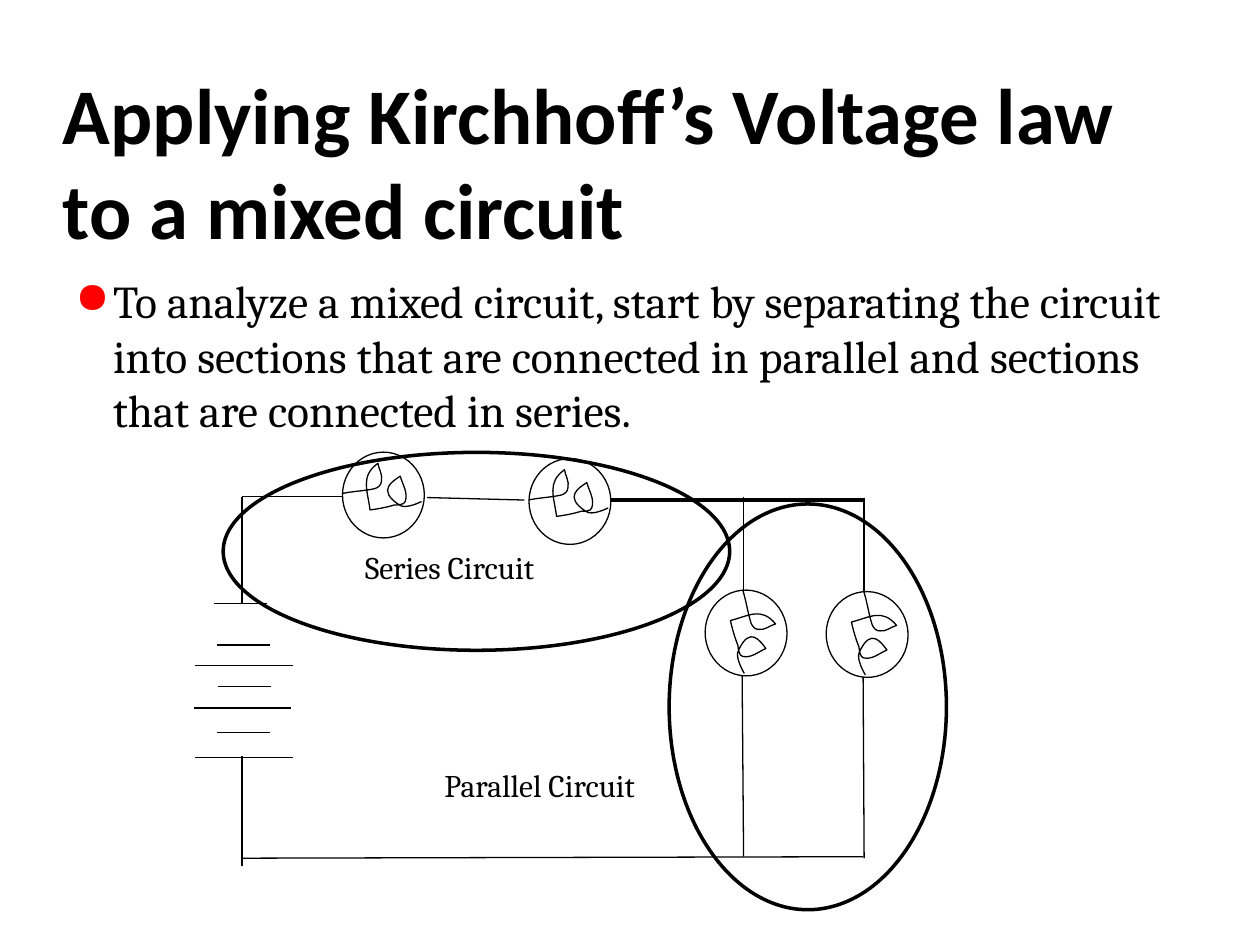
from dataclasses import dataclass
from math import cos, radians, sin
from typing import NamedTuple

from lxml.etree import SubElement
from pptx import Presentation
from pptx.dml.color import RGBColor
from pptx.enum.shapes import MSO_CONNECTOR, MSO_SHAPE
from pptx.enum.text import MSO_ANCHOR, MSO_AUTO_SIZE
from pptx.oxml.ns import qn
from pptx.shapes.autoshape import Shape
from pptx.shapes.shapetree import GroupShapes, SlideShapes
from pptx.text.text import _Paragraph as Paragraph
from pptx.util import Cm, Pt


@dataclass(frozen=True)
class Theme:
    ink: RGBColor = RGBColor(0, 0, 0)
    paper: RGBColor = RGBColor(255, 255, 255)
    bullet: str = "FF0000"
    heading_font: str = "Calibri"
    body_font: str = "Cambria"
    title_size: float = 45
    body_size: float = 26
    label_size: float = 18
    thin: float = 0.75
    outline: float = 2
    thick: float = 2.25


class Wire(NamedTuple):
    x1: float
    y1: float
    x2: float
    y2: float
    weight: float = 0.75


class Plate(NamedTuple):
    left: float
    y: float
    length: float


class Lamp(NamedTuple):
    x: float
    y: float
    turn: float = 0


class Area(NamedTuple):
    left: float
    top: float
    width: float
    height: float


class Label(NamedTuple):
    words: str
    area: Area


THEME = Theme()
SHORT, LONG = 1.07, 1.96
LAMP_WIDTH, LAMP_HEIGHT = 1.65, 1.73
TURN = 83.7

WIRES = [
    Wire(17.42, 10.03, 17.42, 11.91),
    Wire(17.4, 13.59, 17.42, 17.3),
    Wire(4.88, 10.01, 7.01, 10.01),
    Wire(12.27, 10.08, 17.42, 10.08, THEME.thick),
    Wire(14.99, 10.01, 14.99, 11.89),
    Wire(14.96, 13.56, 14.99, 17.27),
    Wire(10.57, 10.08, 8.61, 10.03),
    Wire(4.88, 10.01, 4.88, 12.17),
    Wire(4.88, 15.24, 4.88, 17.45),
    Wire(4.88, 17.3, 17.4, 17.27),
]
BATTERY = [
    Plate(4.32, 12.17, SHORT),
    Plate(4.37, 13, SHORT),
    Plate(3.94, 13.41, LONG),
    Plate(4.39, 13.84, SHORT),
    Plate(3.91, 14.27, LONG),
    Plate(4.37, 14.76, SHORT),
    Plate(3.94, 15.27, LONG),
]
LAMPS = [
    Lamp(7.73, 9.98),
    Lamp(11.49, 10.11),
    Lamp(15.04, 12.76, TURN),
    Lamp(17.48, 12.79, TURN),
]
FILAMENT = [
    (-0.83, -0.03),
    (-0.6, -0.08), (-0.39, -0.08), (-0.17, -0.13),
    (-0.11, -0.15), (-0.04, -0.2), (-0.04, -0.28),
    (-0.01, -0.41), (-0.09, -0.51), (-0.11, -0.64),
    (-0.47, -0.38), (-0.32, -0.1), (-0.27, 0.3),
    (-0.11, 0.28), (0.06, 0.25), (0.22, 0.2),
    (0.29, 0.2), (0.42, 0.2), (0.44, 0.13),
    (0.5, -0.05), (0.39, -0.2), (0.34, -0.38),
    (0.19, -0.28), (-0.14, -0.1), (0.32, 0.2),
    (0.44, 0.3), (0.77, 0.13), (0.77, 0.13),
]
SECTIONS = [Area(4.5, 9.12, 10.21, 3.99), Area(13.49, 10.16, 5.59, 8.18)]
LABELS = [
    Label("Parallel Circuit", Area(8.71, 15.32, 5.41, 1.02)),
    Label("Series Circuit", Area(7.11, 10.92, 5.41, 1.02)),
]


def add_text(shapes: SlideShapes, words: str, area: Area, size: float,
             font: str, bold: bool = False) -> Shape:
    box = shapes.add_textbox(*map(Cm, area))
    box.text_frame.word_wrap = True
    box.text_frame.auto_size = MSO_AUTO_SIZE.NONE
    span = box.text_frame.paragraphs[0].add_run()
    span.text = words
    span.font.name = font
    span.font.size = Pt(size)
    span.font.bold = bold
    span.font.color.rgb = THEME.ink
    return box


def add_bullet(para: Paragraph) -> None:
    properties = para._p.get_or_add_pPr()
    properties.set("marL", str(Cm(0.76)))
    properties.set("indent", str(Cm(-0.76)))
    color = SubElement(properties, qn("a:buClr"))
    SubElement(color, qn("a:srgbClr"), val=THEME.bullet)
    SubElement(properties, qn("a:buSzPct"), val="95000")
    SubElement(properties, qn("a:buChar"), char="●")


def add_wire(shapes: GroupShapes, wire: Wire) -> None:
    line = shapes.add_connector(MSO_CONNECTOR.STRAIGHT, *map(Cm, wire[:4]))
    line.line.color.rgb = THEME.ink
    line.line.width = Pt(wire.weight)
    SubElement(line._element.spPr, qn("a:effectLst"))


def set_outline(shape: Shape, weight: float) -> None:
    shape.shadow.inherit = False
    shape.fill.background()
    shape.line.color.rgb = THEME.ink
    shape.line.width = Pt(weight)


def add_ellipse(shapes: GroupShapes | SlideShapes, area: Area, weight: float) -> Shape:
    ellipse = shapes.add_shape(MSO_SHAPE.OVAL, *map(Cm, area))
    set_outline(ellipse, weight)
    return ellipse


def bend_lines(shape: Shape) -> None:
    lines = list(shape._element.iter(qn("a:lnTo")))
    for start in range(0, len(lines), 3):
        curve = SubElement(lines[start].getparent(), qn("a:cubicBezTo"))
        for line in lines[start:start + 3]:
            curve.append(line[0])
            line.getparent().remove(line)


def add_lamp(shapes: GroupShapes, lamp: Lamp) -> None:
    width, height = (LAMP_HEIGHT, LAMP_WIDTH) if lamp.turn else (LAMP_WIDTH, LAMP_HEIGHT)
    area = Area(lamp.x - width / 2, lamp.y - height / 2, width, height)
    bulb = add_ellipse(shapes, area, THEME.thin)
    bulb.fill.solid()
    bulb.fill.fore_color.rgb = THEME.paper
    bulb.rotation = lamp.turn

    cosine, sine = cos(radians(lamp.turn)), sin(radians(lamp.turn))
    points = []
    for x, y in FILAMENT:
        across, down = x * width / LAMP_WIDTH, y * height / LAMP_HEIGHT
        points.append((Cm(lamp.x + across * cosine - down * sine),
                       Cm(lamp.y + across * sine + down * cosine)))
    builder = shapes.build_freeform(*points[0])
    builder.add_line_segments(points[1:], close=False)
    filament = builder.convert_to_shape()
    set_outline(filament, THEME.thin)
    bend_lines(filament)


def main() -> None:
    deck = Presentation()
    deck.slide_width, deck.slide_height = Cm(25.4), Cm(19.05)
    page = deck.slides.add_slide(deck.slide_layouts[6])

    title = add_text(page.shapes, "Applying Kirchhoff’s Voltage law to a mixed circuit",
                     Area(1.27, 1.96, 22.86, 3.18), THEME.title_size, THEME.heading_font, True)
    frame = title.text_frame
    frame.vertical_anchor = MSO_ANCHOR.BOTTOM
    frame.margin_left = frame.margin_right = frame.margin_bottom = Cm(0)
    body = add_text(page.shapes, "To analyze a mixed circuit, start by separating the circuit "
                    "into sections that are connected in parallel and sections "
                    "that are connected in series.",
                    Area(1.27, 5.38, 22.86, 12.19), THEME.body_size, THEME.body_font)
    add_bullet(body.text_frame.paragraphs[0])

    circuit = page.shapes.add_group_shape().shapes
    plates = [Wire(plate.left, plate.y, plate.left + plate.length, plate.y) for plate in BATTERY]
    for wire in WIRES + plates:
        add_wire(circuit, wire)
    for lamp in LAMPS:
        add_lamp(circuit, lamp)
    for section in SECTIONS:
        add_ellipse(page.shapes, section, THEME.outline)
    for label in LABELS:
        add_text(page.shapes, label.words, label.area, THEME.label_size, THEME.body_font)
    deck.save("out.pptx")


if __name__ == "__main__":
    main()
